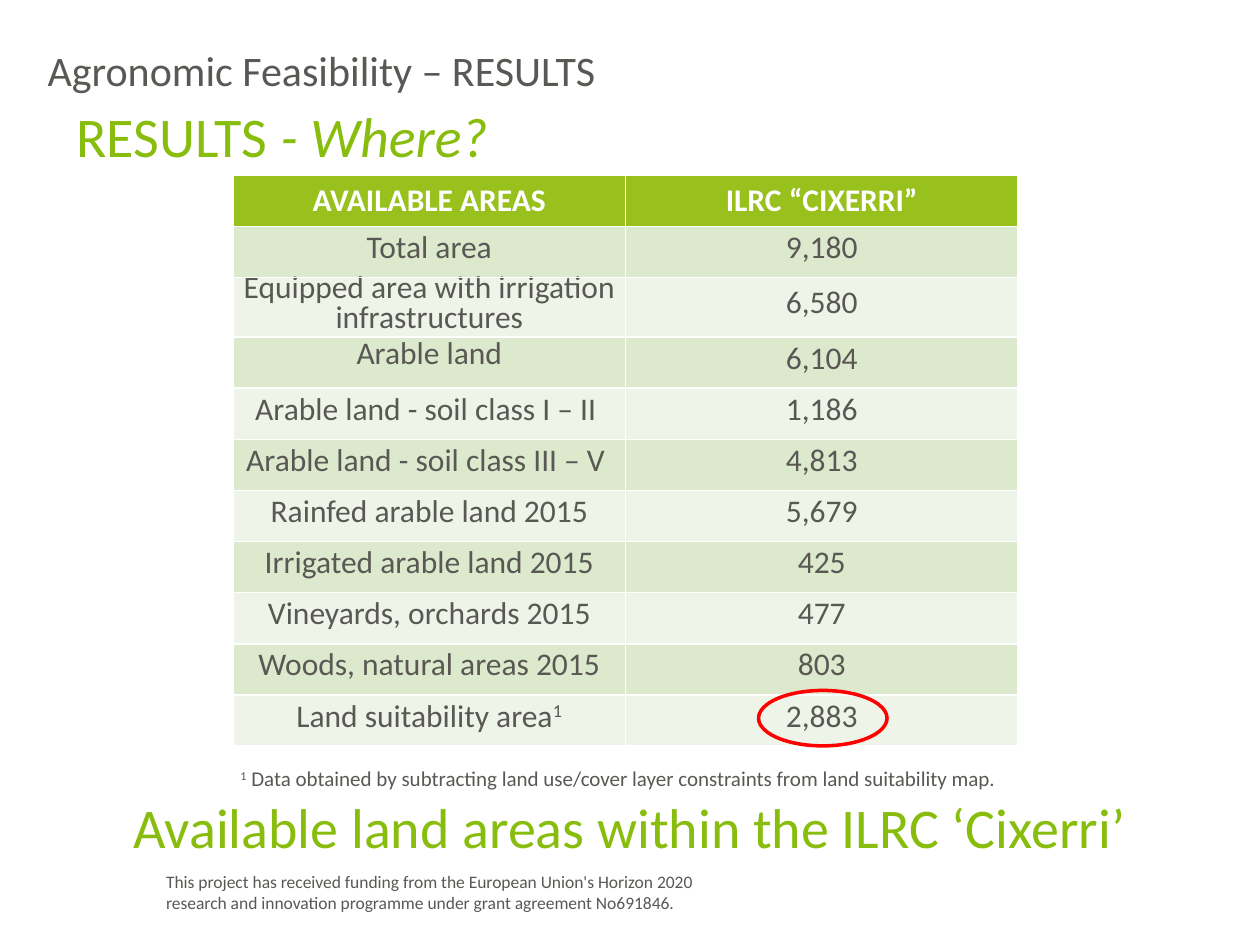
import pptx
import pptx.dml.color
import pptx.enum.shapes
import pptx.enum.text
import pptx.util
from dataclasses import dataclass

Inches, Pt = pptx.util.Inches, pptx.util.Pt
ANCHOR = pptx.enum.text.MSO_ANCHOR


@dataclass(frozen=True)
class Theme:
    font: str = "Calibri"
    grey: str = "595854"
    green: str = "88BD0D"
    header: str = "98C11E"
    bands: tuple = ("DDE9CD", "EFF4E8")
    white: str = "FFFFFF"
    red: str = "FF0000"
    title: int = 32
    section: int = 24
    table: int = 18
    note: int = 12
    funding: int = 10
    line_spacing: int = 17


THEME = Theme()

# Each paragraph is a list of (text, style) runs.
FUNDING = [
    [("This project has received funding from the European Union's Horizon 2020", "")],
    [("research and innovation programme under grant agreement No691846.", "")],
]
CAPTION = [[("Available land areas within the ILRC ‘Cixerri’", "")]]
NOTE = [[("1", "superscript"),
         (" Data obtained by subtracting land use/cover layer constraints "
          "from land suitability map.", "")]]
RESULTS = [[("RESULTS", ""), (" - Where?", "italic")]]
SECTION = [[("Agronomic Feasibility – RESULTS", "")]]

# left, top, width, height, paragraphs, size, colour, anchor
TEXT_BOXES = [
    (1.22, 6.86, 4.8, 0.44, FUNDING, THEME.funding, THEME.grey, ANCHOR.TOP),
    (0.96, 5.97, 9, 1.17, CAPTION, THEME.title, THEME.green, ANCHOR.MIDDLE),
    (1.81, 6.03, 6.58, 0.63, NOTE, THEME.note, THEME.grey, ANCHOR.TOP),
    (0.51, 0.76, 9, 1.17, RESULTS, THEME.title, THEME.green, ANCHOR.TOP),
    (0.28, 0.3, 9.13, 1.25, SECTION, THEME.section, THEME.grey, ANCHOR.TOP),
]

HEADINGS = ("AVAILABLE AREAS", "ILRC “CIXERRI”")
AREAS = [
    ("Total area", "9,180"),
    ("Equipped area with irrigation infrastructures", "6,580"),
    ("Arable land", "6,104"),
    ("Arable land - soil class I – II ", "1,186"),
    ("Arable land - soil class III – V ", "4,813"),
    ("Rainfed arable land 2015", "5,679"),
    ("Irrigated arable land 2015", "425"),
    ("Vineyards, orchards 2015", "477"),
    ("Woods, natural areas 2015", "803"),
    ("Land suitability area", "2,883"),
]
FOOTNOTED = "Land suitability area"
TOP_ALIGNED = "Arable land"
TWO_LINES = 2
TABLE_LEFT, TABLE_TOP, TABLE_WIDTH, TABLE_HEIGHT = 1.85, 1.39, 6.23, 4.53
TALL_ROW = 0.47
HIGHLIGHT = (6.02, 5.48, 1.02, 0.44)


def colour(value):
    return pptx.dml.color.RGBColor.from_string(value)


def add_run(paragraph, text, size, fill, style=""):
    run = paragraph.add_run()
    run.text = text
    font = run.font
    font.name, font.size = THEME.font, Pt(size)
    font.color.rgb = colour(fill)
    font.bold = style == "bold"
    font.italic = style == "italic"
    if style == "superscript":
        font._element.set("baseline", "30000")


def add_text_box(slide, left, top, width, height, paragraphs, size, fill, anchor):
    box = slide.shapes.add_textbox(*map(Inches, (left, top, width, height)))
    frame = box.text_frame
    frame.word_wrap = True
    frame.vertical_anchor = anchor
    for index, runs in enumerate(paragraphs):
        paragraph = frame.add_paragraph() if index else frame.paragraphs[0]
        for text, style in runs:
            add_run(paragraph, text, size, fill, style)


def fill_cell(cell, text, row):
    cell.fill.solid()
    paragraph = cell.text_frame.paragraphs[0]
    paragraph.alignment = pptx.enum.text.PP_ALIGN.CENTER
    if row == 0:
        cell.fill.fore_color.rgb = colour(THEME.header)
        add_run(paragraph, text, THEME.table, THEME.white, "bold")
        return
    cell.fill.fore_color.rgb = colour(THEME.bands[(row - 1) % 2])
    paragraph.line_spacing = Pt(THEME.line_spacing)
    add_run(paragraph, text, THEME.table, THEME.grey)
    if text == FOOTNOTED:
        add_run(paragraph, "1", THEME.table, THEME.grey, "superscript")
    if text != TOP_ALIGNED:
        cell.vertical_anchor = ANCHOR.MIDDLE
        cell.margin_left = cell.margin_right = 0
        cell.margin_top = cell.margin_bottom = 0


def add_area_table(slide):
    rows = [HEADINGS, *AREAS]
    table = slide.shapes.add_table(
        len(rows), len(HEADINGS),
        *map(Inches, (TABLE_LEFT, TABLE_TOP, TABLE_WIDTH, TABLE_HEIGHT))).table
    row_height = (TABLE_HEIGHT - TALL_ROW) / (len(rows) - 1)
    for index, texts in enumerate(rows):
        table.rows[index].height = Inches(TALL_ROW if index == TWO_LINES else row_height)
        for column, text in enumerate(texts):
            fill_cell(table.cell(index, column), text, index)


def add_highlight(slide):
    ellipse = slide.shapes.add_shape(
        pptx.enum.shapes.MSO_SHAPE.OVAL, *map(Inches, HIGHLIGHT))
    ellipse.shadow.inherit = False
    ellipse.fill.background()
    ellipse.line.color.rgb = colour(THEME.red)
    ellipse.line.width = Pt(2)


def main():
    presentation = pptx.Presentation()
    presentation.slide_width, presentation.slide_height = Inches(10), Inches(7.5)
    slide = presentation.slides.add_slide(presentation.slide_layouts[6])
    funding, caption, *others = TEXT_BOXES
    add_text_box(slide, *funding)
    add_text_box(slide, *caption)
    add_area_table(slide)
    for box in others:
        add_text_box(slide, *box)
    add_highlight(slide)
    presentation.save("out.pptx")


if __name__ == "__main__":
    main()
